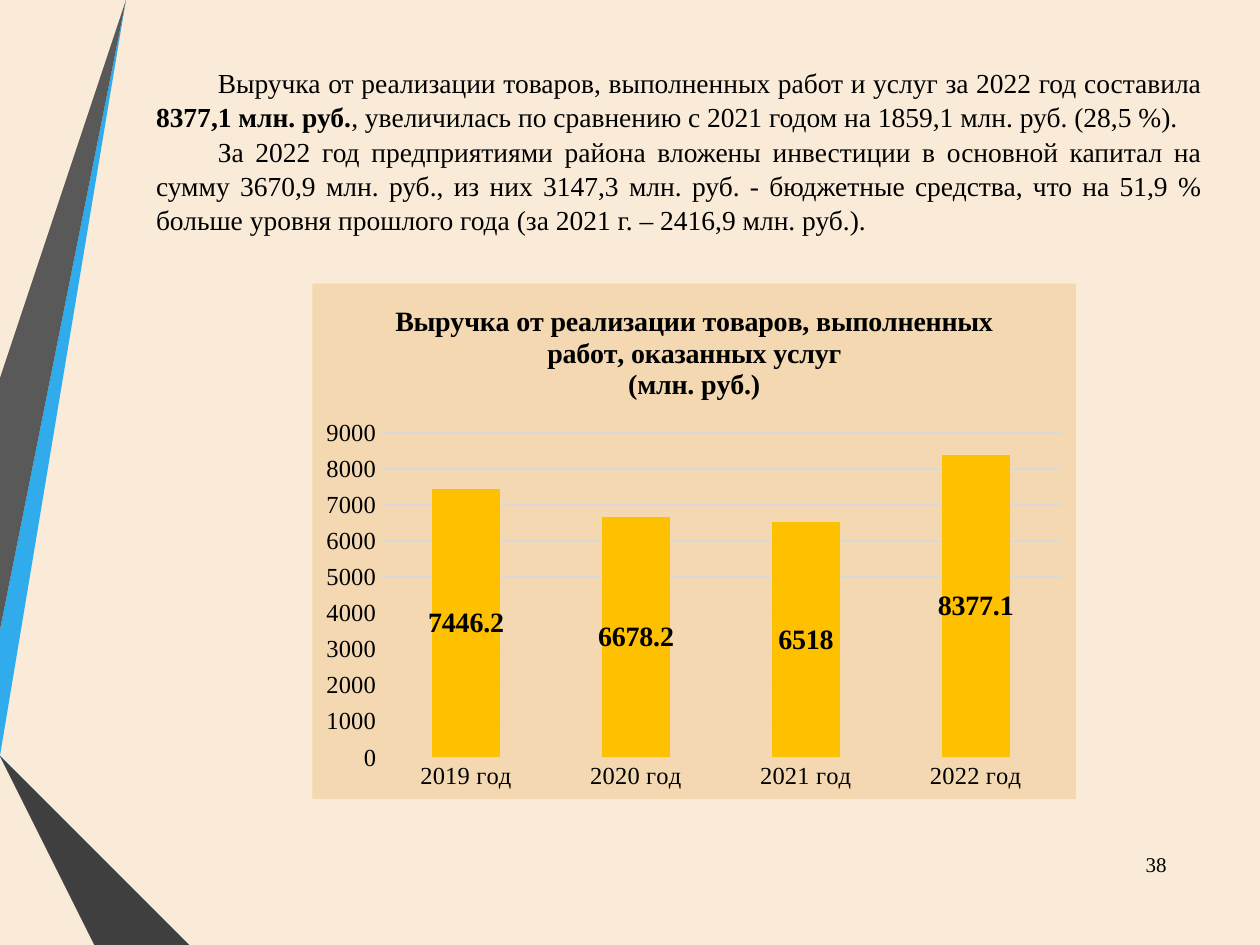
from lxml import etree
from pptx import Presentation
from pptx.chart.data import CategoryChartData
from pptx.dml.color import RGBColor
from pptx.enum.chart import XL_CHART_TYPE as ChartType, XL_LABEL_POSITION as LabelPosition
from pptx.enum.chart import XL_TICK_MARK as TickMark
from pptx.enum.text import MSO_ANCHOR as Anchor, PP_ALIGN as Align
from pptx.oxml import parse_xml
from pptx.oxml.ns import nsdecls, qn
from pptx.util import Inches, Pt

# Content
BODY = [
    [("Выручка от реализации товаров, выполненных работ и услуг за 2022 год составила ", False),
     ("8377,1 млн. руб.", True),
     (", увеличилась по сравнению с 2021 годом на 1859,1 млн. руб. (28,5 %).", False)],
    [("За 2022 год предприятиями района вложены инвестиции в основной капитал на сумму "
      "3670,9 млн. руб., из них 3147,3 млн. руб. - бюджетные средства, что на 51,9 % больше "
      "уровня прошлого года (за 2021 г. – 2416,9 млн. руб.).", False)],
]
PAGE_NUMBER = [[("38", False)]]
CHART_TITLE = ["Выручка от реализации товаров, выполненных работ, оказанных услуг", "(млн. руб.)"]
REVENUE = {"2019 год": 7446.2, "2020 год": 6678.2, "2021 год": 6518, "2022 год": 8377.1}

# Style
FONT = "Times New Roman"
BLACK = RGBColor(0x00, 0x00, 0x00)
CREAM = RGBColor(0xF9, 0xEB, 0xD8)
SAND = RGBColor(0xF3, 0xD8, 0xB2)
GOLD = RGBColor(0xFF, 0xC0, 0x00)
GRID_GRAY = RGBColor(0xD9, 0xD9, 0xD9)
SKY = RGBColor(0x30, 0xAC, 0xEC)
BLUE = RGBColor(0x12, 0x87, 0xC3)
NAVY = RGBColor(0x0C, 0x5A, 0x82)
GRAY = RGBColor(0x59, 0x59, 0x59)
DARK_GRAY = RGBColor(0x40, 0x40, 0x40)
CHARCOAL = RGBColor(0x26, 0x26, 0x26)

# Ribbon outlines in inches, back to front
RIBBONS = [
    (SKY, [(0, 5.44), (0, 5.75), (0.22, 5.79), (1.17, 0), (0.89, 0)]),
    (GRAY, [(0.83, 0), (0.55, 0), (0, 3.36), (0, 5.06)]),
    (CHARCOAL, [(0, 6.19), (0, 6.21), (0.93, 7.5), (0.99, 7.5)]),
    (NAVY, [(0, 5.79), (0, 5.8), (1.56, 7.5), (1.63, 7.5)]),
    (BLUE, [(0, 5.79), (1.63, 7.5), (2.33, 7.5), (0.22, 5.79), (0, 5.75)]),
    (DARK_GRAY, [(0, 6.19), (0.99, 7.5), (1.51, 7.5), (0, 5.86)]),
]


def style_font(font, size, bold=False):
    font.name, font.size, font.bold = FONT, Pt(size), bold
    font.color.rgb = BLACK


def add_text(slide, paragraphs, box, size, align, indent=0, spacing=1.0):
    frame = slide.shapes.add_textbox(*map(Inches, box)).text_frame
    frame.word_wrap = True
    frame.vertical_anchor = Anchor.MIDDLE
    for number, runs in enumerate(paragraphs):
        paragraph = frame.paragraphs[0] if number == 0 else frame.add_paragraph()
        paragraph.alignment = align
        paragraph.line_spacing = spacing
        if indent:
            paragraph_format = paragraph._p.get_or_add_pPr()
            paragraph_format.set("marL", "0")
            paragraph_format.set("indent", str(Inches(indent)))
        for text, bold in runs:
            run = paragraph.add_run()
            run.text = text
            style_font(run.font, size, bold)


def add_ribbon(slide, color, points):
    builder = slide.shapes.build_freeform(*points[0], scale=Inches(1))
    builder.add_line_segments(points[1:], close=True)
    shape = builder.convert_to_shape()
    shape.shadow.inherit = False
    shape.fill.solid()
    shape.fill.fore_color.rgb = color
    shape.line.fill.background()


def add_revenue_chart(slide, box):
    data = CategoryChartData()
    data.categories = list(REVENUE)
    data.add_series("Выручка", list(REVENUE.values()))
    chart = slide.shapes.add_chart(ChartType.COLUMN_STACKED, *map(Inches, box), data).chart
    chart.has_legend = False
    style_font(chart.font, 14)

    # Title
    title_frame = chart.chart_title.text_frame
    for number, text in enumerate(CHART_TITLE):
        paragraph = title_frame.paragraphs[0] if number == 0 else title_frame.add_paragraph()
        run = paragraph.add_run()
        run.text = text
        style_font(run.font, 16, True)
    chart.chart_title.include_in_layout = False

    # Axes and gridlines
    for axis in (chart.category_axis, chart.value_axis):
        axis.major_tick_mark = axis.minor_tick_mark = TickMark.NONE
        axis.format.line.fill.background()
        style_font(axis.tick_labels.font, 14)
    value_axis = chart.value_axis
    value_axis.minimum_scale, value_axis.maximum_scale, value_axis.major_unit = 0, 9000, 1000
    grid_line = value_axis.major_gridlines.format.line
    grid_line.color.rgb, grid_line.width = GRID_GRAY, Pt(0.75)

    # Columns and labels
    plot = chart.plots[0]
    plot.gap_width, plot.overlap, plot.vary_by_categories = 150, 100, False
    plot.series[0].format.fill.solid()
    plot.series[0].format.fill.fore_color.rgb = GOLD
    plot.has_data_labels = True
    labels = plot.data_labels
    labels.show_value, labels.position = True, LabelPosition.CENTER
    labels.number_format, labels.number_format_is_linked = "General", False
    style_font(labels.font, 16, True)

    # Plot area position as shares of the chart
    plot_area = chart._chartSpace.chart.plotArea
    for layout in plot_area.findall(qn("c:layout")):
        plot_area.remove(layout)
    layout = etree.Element(qn("c:layout"))
    manual = etree.SubElement(layout, qn("c:manualLayout"))
    for tag, value in [("layoutTarget", "inner"), ("xMode", "edge"), ("yMode", "edge"),
                       ("x", "0.09"), ("y", "0.29"), ("w", "0.89"), ("h", "0.63")]:
        etree.SubElement(manual, qn(f"c:{tag}")).set("val", value)
    plot_area.insert(0, layout)

    # Chart background
    chart._chartSpace.chart.addnext(parse_xml(
        f'<c:spPr {nsdecls("c", "a")}><a:solidFill><a:srgbClr val="{SAND}"/></a:solidFill>'
        '<a:ln><a:noFill/></a:ln></c:spPr>'))


def main():
    presentation = Presentation()
    presentation.slide_width, presentation.slide_height = Inches(10), Inches(7.5)
    slide = presentation.slides.add_slide(presentation.slide_layouts[6])
    slide.background.fill.solid()
    slide.background.fill.fore_color.rgb = CREAM
    for color, points in RIBBONS:
        add_ribbon(slide, color, points)
    add_text(slide, BODY, (1.14, 0.29, 8.5, 1.81), 15.7, Align.JUSTIFY, indent=0.49, spacing=1.04)
    add_revenue_chart(slide, (2.48, 2.25, 6.06, 4.09))
    add_text(slide, PAGE_NUMBER, (8.94, 6.66, 0.47, 0.4), 12, Align.CENTER)
    presentation.save("out.pptx")


if __name__ == "__main__":
    main()
